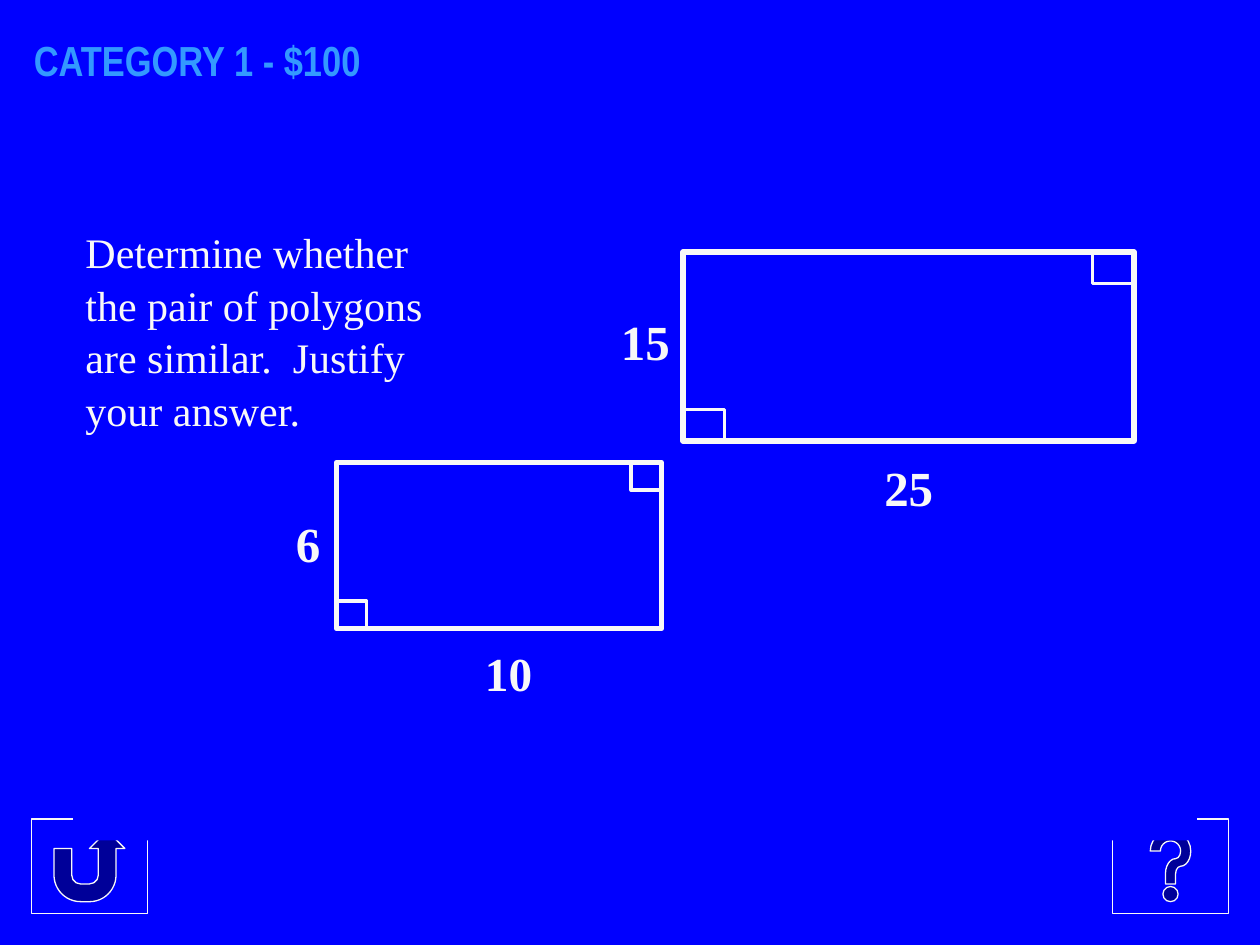
from pptx import Presentation
from pptx import util as u
from pptx.dml.color import RGBColor
from pptx.enum import shapes, text

BLUE = "0000FF"
WHITE = "F8F8F8"
SKY = "3399FF"
SERIF = "Times New Roman"


def color(hex_string):
    return RGBColor.from_string(hex_string)


def add_box(container, kind, box, fill=None, line_width=None):
    shape = container.add_shape(kind, *map(u.Inches, box))
    shape.shadow.inherit = False
    if fill:
        shape.fill.solid()
        shape.fill.fore_color.rgb = color(fill)
    else:
        shape.fill.background()
    if line_width:
        shape.line.color.rgb = color(WHITE)
        shape.line.width = u.Pt(line_width)
    else:
        shape.line.fill.background()
    return shape


def write(shape, words, size, font=SERIF, hex_string=WHITE, bold=False, space=0):
    frame = shape.text_frame
    frame.word_wrap = True
    frame.text = words
    for paragraph in frame.paragraphs:
        paragraph.alignment = text.PP_ALIGN.LEFT
        paragraph.space_before = u.Pt(space)
        for run in paragraph.runs:
            run.font.name = font
            run.font.size = u.Pt(size)
            run.font.bold = bold
            run.font.color.rgb = color(hex_string)
    return frame


def add_text(container, box, words, size, **style):
    textbox = container.add_textbox(*map(u.Inches, box))
    return write(textbox, words, size, **style)


def add_rectangle_figure(slide, box, corner, labels):
    left, top, width, height = box
    corner_width, corner_height = corner
    group = slide.shapes.add_group_shape().shapes
    rectangle = shapes.MSO_SHAPE.RECTANGLE
    add_box(group, rectangle, box, line_width=3)
    lower_left = (left, top + height - corner_height)
    upper_right = (left + width - corner_width, top)
    for position in (lower_left, upper_right):
        add_box(group, rectangle, position + corner, line_width=2)
    for label, size, label_box in labels:
        add_text(group, label_box, label, size, bold=True)


def main():
    presentation = Presentation()
    presentation.slide_width = u.Inches(10)
    presentation.slide_height = u.Inches(7.5)
    slide = presentation.slides.add_slide(presentation.slide_layouts[6])
    slide.background.fill.solid()
    slide.background.fill.fore_color.rgb = color(BLUE)

    buttons = ((shapes.MSO_SHAPE.ACTION_BUTTON_HELP, 8.83),
               (shapes.MSO_SHAPE.ACTION_BUTTON_RETURN, 0.25))
    for kind, left in buttons:
        add_box(slide.shapes, kind, (left, 6.5, 0.92, 0.75), BLUE, 0.75)

    title = add_text(slide.shapes, (0.17, 0.25, 8.5, 0.5), "CATEGORY 1 - $100",
                     24, font="Arial Narrow", hex_string=SKY, bold=True)
    title.vertical_anchor = text.MSO_ANCHOR.MIDDLE
    title.margin_top = 0

    panel = add_box(slide.shapes, shapes.MSO_SHAPE.RECTANGLE,
                    (0.58, 1.75, 8.92, 4.92), BLUE)
    question = write(panel, "Determine whether\nthe pair of polygons\n"
                     "are similar.  Justify\nyour answer.", 24, space=1.2)
    question.vertical_anchor = text.MSO_ANCHOR.TOP

    add_rectangle_figure(slide, (5.42, 2, 3.58, 1.5), (0.33, 0.25),
                         (("25", 28, (6.92, 3.58, 0.67, 0.57)),
                          ("15", 28, (4.83, 2.42, 0.67, 0.57))))
    add_rectangle_figure(slide, (2.67, 3.67, 2.58, 1.32), (0.24, 0.22),
                         (("10", 27, (3.75, 5.06, 0.58, 0.55)),
                          ("6", 28, (2.25, 4.03, 0.48, 0.57))))
    presentation.save("out.pptx")


if __name__ == "__main__":
    main()
